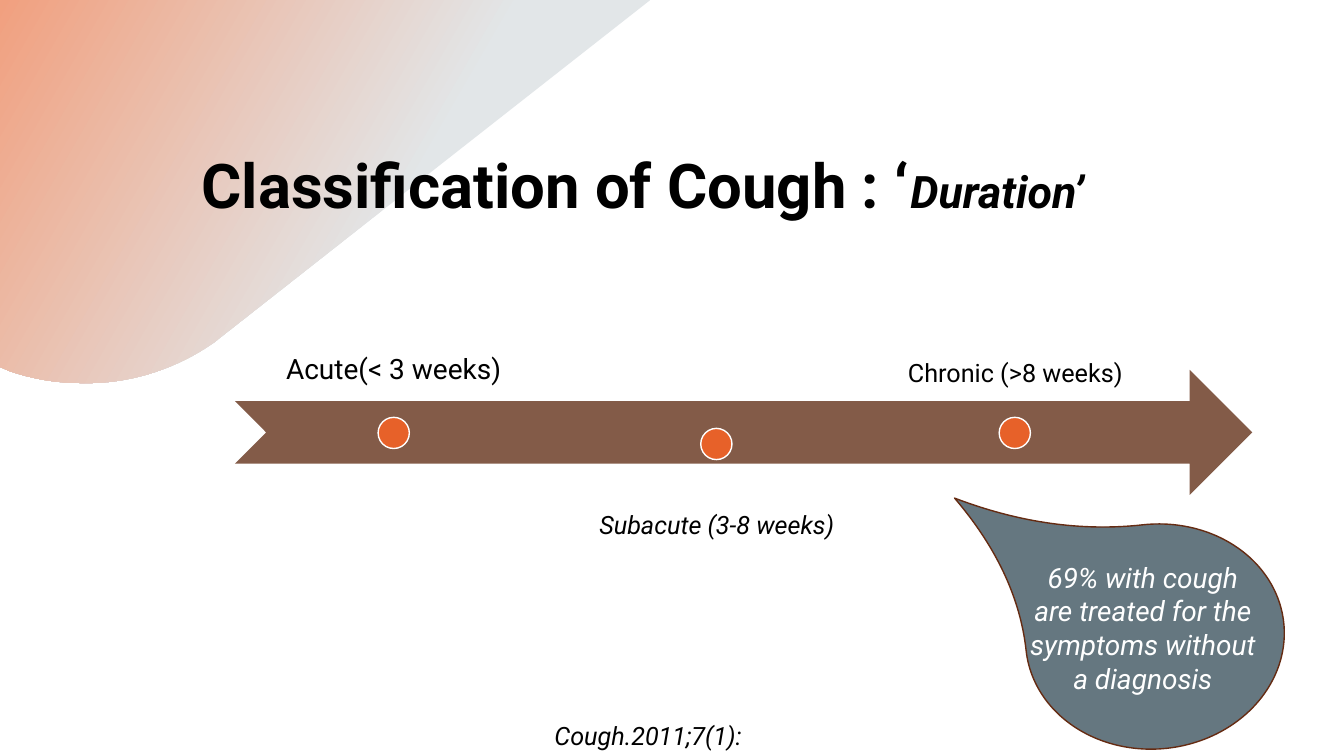
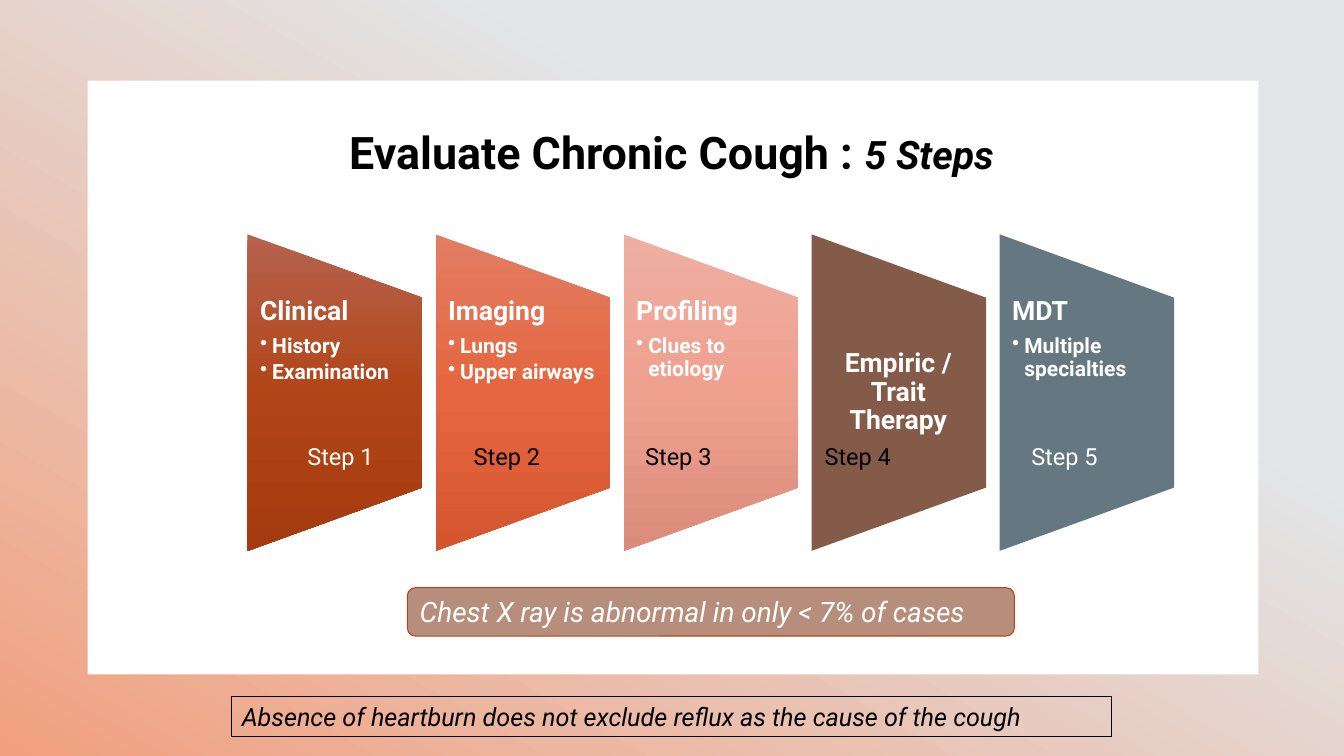
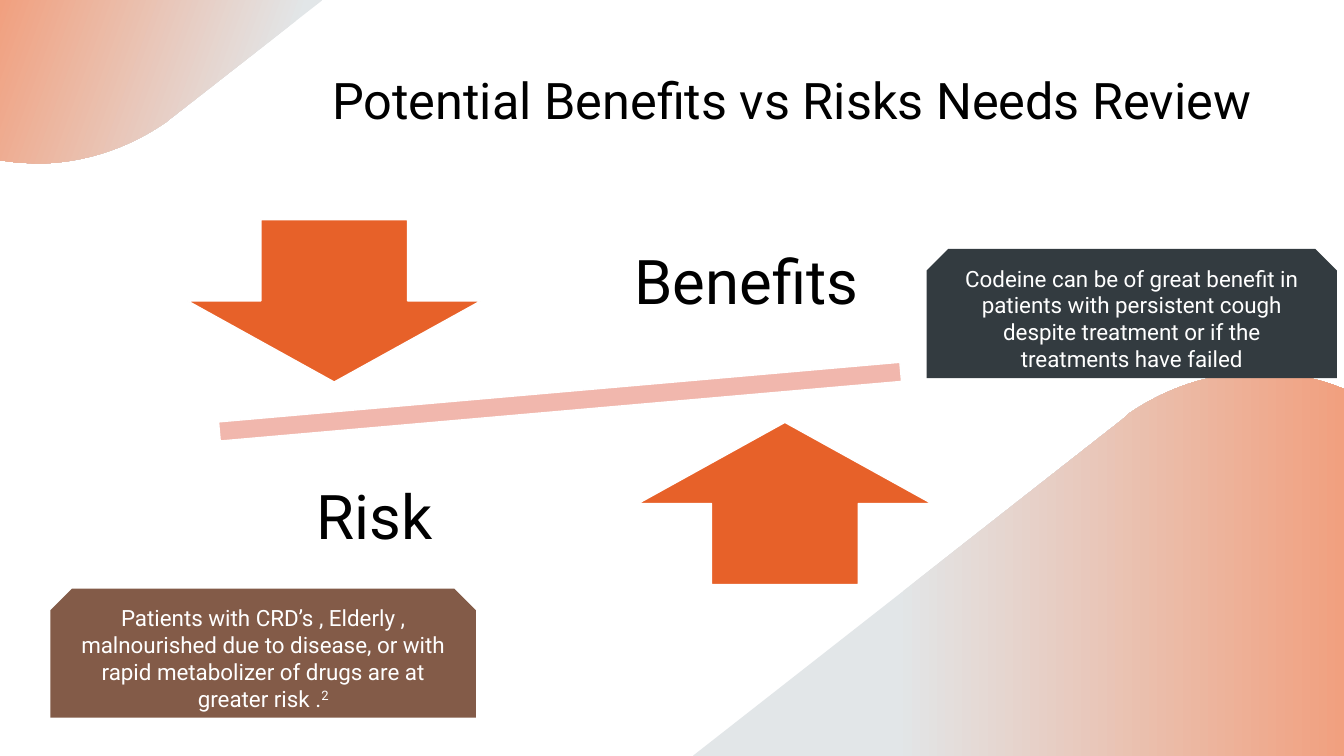
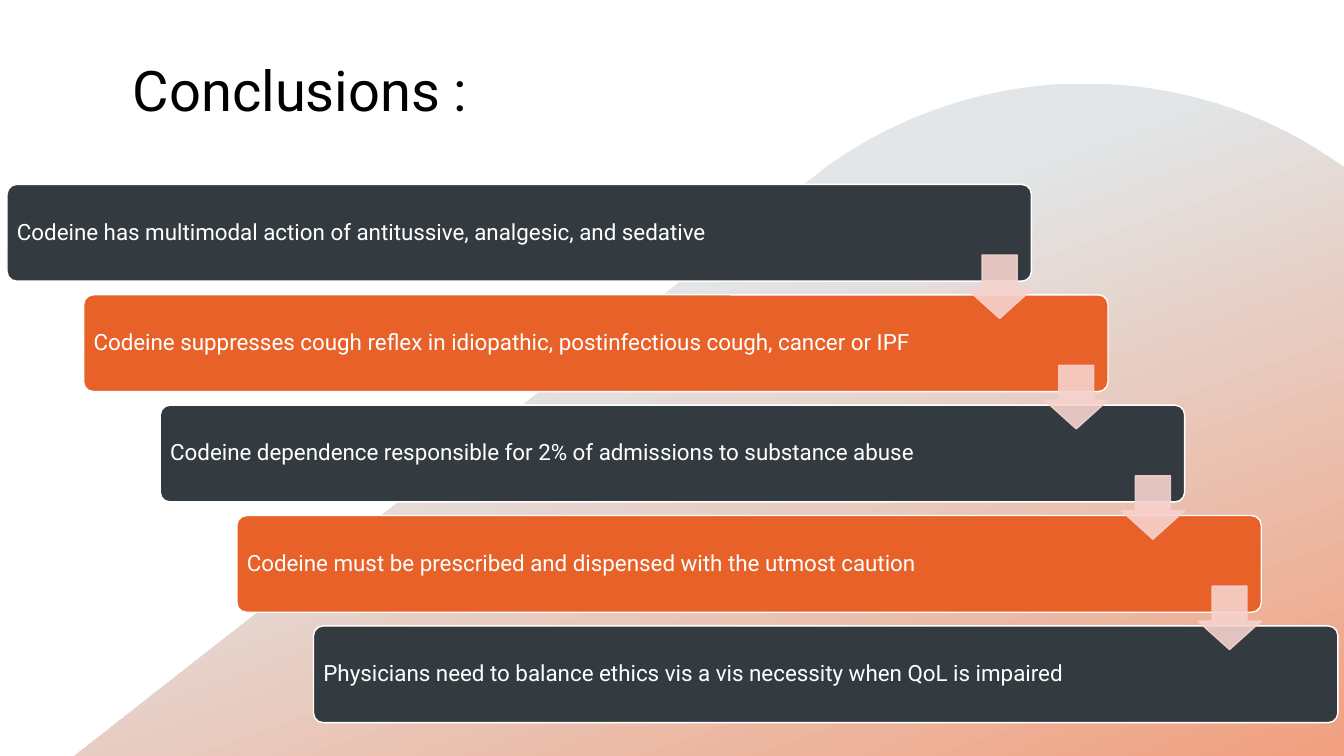
from dataclasses import dataclass

import pptx
import pptx.dml.color
import pptx.enum.shapes
import pptx.enum.text
import pptx.oxml
import pptx.oxml.ns
import pptx.util
from lxml import etree

Inches = pptx.util.Inches
Pt = pptx.util.Pt
SHAPE = pptx.enum.shapes.MSO_SHAPE
ANCHOR = pptx.enum.text.MSO_ANCHOR
ALIGN = pptx.enum.text.PP_ALIGN
qn = pptx.oxml.ns.qn


@dataclass(frozen=True)
class Theme:
    font: str = "Roboto"
    black: str = "000000"
    white: str = "FFFFFF"
    orange: str = "E76129"
    brown: str = "835B48"
    slate: str = "657780"
    dark: str = "333B40"
    mist: str = "E2E6E8"
    peach: str = "F1A07F"
    pink: str = "F1B7AD"
    blush: str = "F6D2CD"
    tan: str = "B68E7B"
    rust: str = "B74515"
    maroon: str = "652B12"
    callout: float = 20
    label: float = 18
    body: float = 16
    step: float = 16.8
    step_title: float = 19
    step_item: float = 15
    scale: float = 44


THEME = Theme()
WIDTH, HEIGHT = 13.33, 7.5
TIGHT = 0.9
WHITE_LINE = (THEME.white, 1)

# Outlines: two numbers are a corner, six are a cubic curve.
SLOPE_TOP = [
    (0.79, 3.8), (0.56, 3.8, 0.32, 3.76, 0.09, 3.68), (0, 3.64), (0, 0),
    (6.45, 0), (2.17, 3.36), (2.12, 3.4),
    (1.76, 3.65, 1.34, 3.79, 0.92, 3.8), (0.88, 3.8, 0.84, 3.8, 0.79, 3.8),
]
SLOPE_CORNER = [
    (0, 0), (3.2, 0), (1.7, 1.17), (1.65, 1.21),
    (1.29, 1.46, 0.88, 1.6, 0.46, 1.62), (0.42, 1.62, 0.37, 1.62, 0.33, 1.62),
    (0.27, 1.62, 0.21, 1.61, 0.15, 1.61), (0, 1.59),
]
SLOPE_BOTTOM = [
    (12.53, 3.7), (12.77, 3.7, 13, 3.74, 13.23, 3.82), (13.33, 3.86),
    (13.33, 7.5), (6.87, 7.5), (11.16, 4.14), (11.2, 4.1),
    (11.57, 3.85, 11.98, 3.71, 12.4, 3.7), (12.44, 3.7, 12.48, 3.69, 12.53, 3.7),
]
SLOPE_LARGE = [
    (10.83, 0.83), (11.66, 0.84, 12.48, 1.09, 13.18, 1.56), (13.33, 1.66),
    (13.33, 7.5), (0.74, 7.5), (8.14, 1.7), (8.23, 1.63),
    (8.94, 1.13, 9.76, 0.87, 10.57, 0.83), (10.66, 0.83, 10.74, 0.83, 10.83, 0.83),
]

# Text, box, size, italic, anchor, inset
DURATIONS = [
    ("Acute(< 3 weeks)", (2.33, 2.74, 3.15, 1.24), THEME.callout, False, ANCHOR.BOTTOM, 0.16),
    ("Subacute (3-8 weeks)", (5.59, 4.95, 3.04, 0.78), THEME.label, True, ANCHOR.TOP, 0.14),
    ("Chronic (>8 weeks)", (8.73, 2.74, 2.68, 1.24), THEME.label, False, ANCHOR.BOTTOM, 0.14),
]
MARKERS = [(3.75, 4.14), (6.95, 4.25), (9.91, 4.14)]

# Heading, items, fill (colour or gradient stops), label left, label colour
STEPS = [
    ("Clinical", ["History", "Examination"],
     [(0, "B6624E"), (50, "B24517"), (100, "A43B0E")], 2.95, THEME.white),
    ("Imaging", ["Lungs", "Upper airways"],
     [(0, "E27D63"), (50, "E5663F"), (100, "D4562F")], 4.6, THEME.black),
    ("Profiling", ["Clues to etiology"],
     [(0, "EEAFA1"), (50, "EFA08F"), (100, "DA8B7A")], 6.3, THEME.black),
    ("Empiric / Trait Therapy", [], THEME.brown, 8.08, THEME.black),
    ("MDT", ["Multiple specialties"], THEME.slate, 10.13, THEME.white),
]

ARROWS = [(SHAPE.DOWN_ARROW, 1.86, 2.18), (SHAPE.UP_ARROW, 6.33, 4.19)]
SCALE_LABELS = [("Benefits", 5.85, 1.98), ("Risk", 2.16, 4.31)]
SCALE_NOTES = [
    ([("Codeine can be of great benefit in patients with persistent cough despite "
       "treatment or if the treatments have failed", {})],
     (9.19, 2.47, 4.07, 1.28), THEME.dark),
    ([("Patients with CRD’s , Elderly , malnourished due to disease, or with rapid "
       "metabolizer of drugs are at greater risk .", {}), ("2", {"baseline": 30000})],
     (0.5, 5.84, 4.22, 1.28), THEME.brown),
]

CONCLUSIONS = [
    "Codeine has multimodal action of antitussive, analgesic, and sedative",
    "Codeine suppresses cough reflex in idiopathic, postinfectious cough, cancer or IPF",
    "Codeine dependence responsible for 2% of admissions to substance abuse",
    "Codeine must be prescribed and dispensed with the utmost caution",
    "Physicians need to balance ethics vis a vis necessity when QoL is impaired",
]


def rgb(value):
    return pptx.dml.color.RGBColor.from_string(value)


def inches(values):
    return [Inches(value) for value in values]


def paint(shape, fill=None, line=None, angle=90):
    """Fill with a colour, or with gradient stops running clockwise from rightward."""
    shape.shadow.inherit = False
    if fill is None:
        shape.fill.background()
    elif isinstance(fill, str):
        shape.fill.solid()
        shape.fill.fore_color.rgb = rgb(fill)
    else:
        shape.fill.gradient()
        shape.fill.gradient_angle = (360 - angle) % 360
        gradient = shape._element.spPr.find(qn("a:gradFill"))
        gradient.set("rotWithShape", "0")
        stops = gradient.find(qn("a:gsLst"))
        for stop in list(stops):
            stops.remove(stop)
        for position, color in fill:
            stop = etree.SubElement(stops, qn("a:gs"), pos=str(position * 1000))
            etree.SubElement(stop, qn("a:srgbClr"), val=color)
    if line:
        shape.line.color.rgb = rgb(line[0])
        shape.line.width = Pt(line[1])
    else:
        shape.line.fill.background()


def add_shape(slide, kind, box, fill=None, line=None, angle=90, rotation=0, adjustments=()):
    shape = slide.shapes.add_shape(kind, *inches(box))
    shape.rotation = rotation
    for index, value in enumerate(adjustments):
        shape.adjustments[index] = value
    paint(shape, fill, line, angle)
    return shape


def add_slope(slide, outline, start, angle):
    """Draw a gradient area; start is where the gradient begins, in percent."""
    points = []
    for segment in outline:
        if len(segment) == 2:
            points.append(segment)
            continue
        x0, y0 = points[-1]
        x1, y1, x2, y2, x3, y3 = segment
        for step in range(1, 17):
            t = step / 16
            u = 1 - t
            weights = (u ** 3, 3 * u * u * t, 3 * u * t * t, t ** 3)
            points.append((
                sum(w * x for w, x in zip(weights, (x0, x1, x2, x3))),
                sum(w * y for w, y in zip(weights, (y0, y1, y2, y3))),
            ))
    points = [tuple(inches(point)) for point in points]
    builder = slide.shapes.build_freeform(*points[0])
    builder.add_line_segments(points[1:], close=True)
    paint(builder.convert_to_shape(), [(start, THEME.mist), (100, THEME.peach)], angle=angle)


def set_frame(shape, anchor=ANCHOR.TOP, insets=(0.1, 0.05), wrap=True):
    frame = shape.text_frame
    frame.word_wrap = wrap
    frame.vertical_anchor = anchor
    frame.margin_left = frame.margin_right = Inches(insets[0])
    frame.margin_top = frame.margin_bottom = Inches(insets[1])
    return frame


def write(paragraph, runs, size, color=THEME.black, align=ALIGN.LEFT, spacing=None,
          after=0, bold=False, italic=False, bullet=False):
    """Fill a paragraph with a string or with (text, changes) runs."""
    if bullet:
        properties = paragraph._p.get_or_add_pPr()
        properties.set("marL", str(Inches(0.12)))
        properties.set("indent", str(-Inches(0.12)))
        etree.SubElement(properties, qn("a:buChar"), char="•")
    paragraph.alignment = align
    paragraph.space_after = Pt(after)
    if spacing:
        paragraph.line_spacing = spacing
    font = paragraph.font
    font.name, font.size, font.bold, font.italic = THEME.font, Pt(size), bold, italic
    font.color.rgb = rgb(color)
    for text, changes in [(runs, {})] if isinstance(runs, str) else runs:
        run = paragraph.add_run()
        run.text = text
        if "size" in changes:
            run.font.size = Pt(changes["size"])
        if "italic" in changes:
            run.font.italic = changes["italic"]
        if "baseline" in changes:
            run.font._element.set("baseline", str(changes["baseline"]))


def add_text(slide, box, runs, size, anchor=ANCHOR.TOP, insets=(0.1, 0.05), wrap=True, **style):
    frame = set_frame(slide.shapes.add_textbox(*inches(box)), anchor, insets, wrap)
    write(frame.paragraphs[0], runs, size, **style)
    return frame


def add_title(slide, box, runs, size, **style):
    add_text(slide, box, runs, size, spacing=TIGHT, **style)


def build_classification(slide):
    add_slope(slide, SLOPE_TOP, 40, 210)
    add_title(slide, (1.9, 1.13, 10.09, 1.49),
              [("Classification of Cough : ‘", {}), ("Duration’", {"size": 32, "italic": True})],
              44, bold=True, anchor=ANCHOR.MIDDLE)
    add_shape(slide, SHAPE.NOTCHED_RIGHT_ARROW, (2.33, 3.67, 10.09, 1.24), THEME.brown)
    for text, box, size, italic, anchor, inset in DURATIONS:
        add_text(slide, box, text, size, anchor, (inset, inset),
                 align=ALIGN.CENTER, spacing=TIGHT, italic=italic)
    for left, top in MARKERS:
        add_shape(slide, SHAPE.OVAL, (left, top, 0.31, 0.31), THEME.orange, WHITE_LINE)
    add_text(slide, (5.4, 7.1, 2.11, 0.4), "Cough.2011;7(1):", THEME.label, italic=True)
    add_shape(slide, SHAPE.TEAR, (10.34, 5.03, 2.23, 2.57), THEME.slate, (THEME.maroon, 1),
              rotation=263.7, adjustments=[1.42])
    add_text(slide, (10.11, 5.51, 2.45, 1.78),
             "69% with cough are treated for the symptoms without a diagnosis",
             THEME.callout, color=THEME.white, align=ALIGN.CENTER, italic=True)


def build_steps(slide):
    add_shape(slide, SHAPE.RECTANGLE, (0, 0, WIDTH, HEIGHT),
              [(32, THEME.mist), (100, THEME.peach)], angle=120)
    add_shape(slide, SHAPE.RECTANGLE, (0.87, 0.8, 11.61, 5.89), THEME.white)
    add_title(slide, (2.33, 1.25, 8.66, 0.63),
              [("Evaluate Chronic Cough : ", {}), ("5 Steps", {"size": 28, "italic": True})],
              32, bold=True, align=ALIGN.CENTER)
    pitch = (9.21 - 1.75) / (len(STEPS) - 1)
    for index, (heading, items, fill, label_left, label_color) in enumerate(STEPS):
        offset = index * pitch
        add_shape(slide, SHAPE.FLOWCHART_MANUAL_OPERATION, (1.75 + offset, 3.03, 3.14, 1.73),
                  fill, rotation=270)
        frame = add_text(slide, (2.45 + offset, 2.95, 1.73, 1.89), heading, THEME.step_title,
                         ANCHOR.TOP if items else ANCHOR.MIDDLE, (0.13, 0),
                         align=ALIGN.LEFT if items else ALIGN.CENTER,
                         color=THEME.white, bold=True, spacing=TIGHT, after=6.6)
        for item in items:
            write(frame.add_paragraph(), item, THEME.step_item, THEME.white,
                  spacing=TIGHT, after=2.25, bold=True, bullet=True)
        add_text(slide, (label_left, 4.34, 0.92, 0.38), f"Step {index + 1}", THEME.step,
                 wrap=False, color=label_color)
    finding = add_shape(slide, SHAPE.ROUNDED_RECTANGLE, (4.04, 5.83, 6.02, 0.48),
                        THEME.tan, (THEME.rust, 0.75))
    write(set_frame(finding).paragraphs[0], "Chest X ray is abnormal in only < 7% of cases",
          THEME.callout, THEME.white, italic=True)
    caution = add_shape(slide, SHAPE.RECTANGLE, (2.3, 6.91, 8.72, 0.4), line=(THEME.black, 0.75))
    write(set_frame(caution).paragraphs[0],
          "Absence of heartburn does not exclude reflux as the cause of the cough",
          THEME.label, italic=True)


def build_balance(slide):
    add_slope(slide, SLOPE_CORNER, 19, 200)
    add_slope(slide, SLOPE_BOTTOM, 31, 0)
    add_shape(slide, SHAPE.MATH_MINUS, (0.94, 3.58, 9.23, 0.81), THEME.pink, WHITE_LINE,
              rotation=355)
    for kind, left, top in ARROWS:
        add_shape(slide, kind, (left, top, 2.91, 1.61), THEME.orange, WHITE_LINE)
    for text, left, top in SCALE_LABELS:
        add_text(slide, (left, top, 3.11, 1.69), text, THEME.scale, ANCHOR.MIDDLE,
                 (0.34, 0.34), align=ALIGN.CENTER, spacing=TIGHT)
    for runs, box, fill in SCALE_NOTES:
        note = add_shape(slide, SHAPE.SNIP_2_SAME_RECTANGLE, box, fill)
        write(set_frame(note).paragraphs[0], runs, THEME.body, THEME.white, ALIGN.CENTER)
    add_title(slide, (2.58, 0.3, 10.55, 1.04), "Potential Benefits vs Risks Needs Review", 36,
              align=ALIGN.CENTER, anchor=ANCHOR.BOTTOM)


def build_conclusions(slide):
    add_slope(slide, SLOPE_LARGE, 37, 70)
    step_x, step_y = 0.76, 1.095
    for index, text in enumerate(CONCLUSIONS):
        bar = add_shape(slide, SHAPE.ROUNDED_RECTANGLE,
                        (0.07 + index * step_x, 1.83 + index * step_y, 10.16, 0.96),
                        THEME.orange if index % 2 else THEME.dark, WHITE_LINE,
                        adjustments=[0.1])
        frame = set_frame(bar, ANCHOR.MIDDLE, (0.07, 0.07))
        write(frame.paragraphs[0], text, THEME.body, THEME.white, spacing=TIGHT)
    for index in range(len(CONCLUSIONS) - 1):
        arrow = add_shape(slide, SHAPE.DOWN_ARROW,
                          (9.6 + index * step_x, 2.53 + index * step_y, 0.63, 0.63),
                          THEME.blush, (THEME.blush, 1), adjustments=[0.55, 0.45])
        for color in arrow._element.spPr.iter(qn("a:srgbClr")):
            etree.SubElement(color, qn("a:alpha"), val="90000")
    add_title(slide, (1.22, 0.24, 9.72, 1.04), "Conclusions :", 40, anchor=ANCHOR.BOTTOM)


def main():
    presentation = pptx.Presentation()
    presentation.slide_width, presentation.slide_height = inches((WIDTH, HEIGHT))
    blank = presentation.slide_layouts[6]
    for build in (build_classification, build_steps, build_balance, build_conclusions):
        build(presentation.slides.add_slide(blank))
    presentation.save("out.pptx")


if __name__ == "__main__":
    main()
